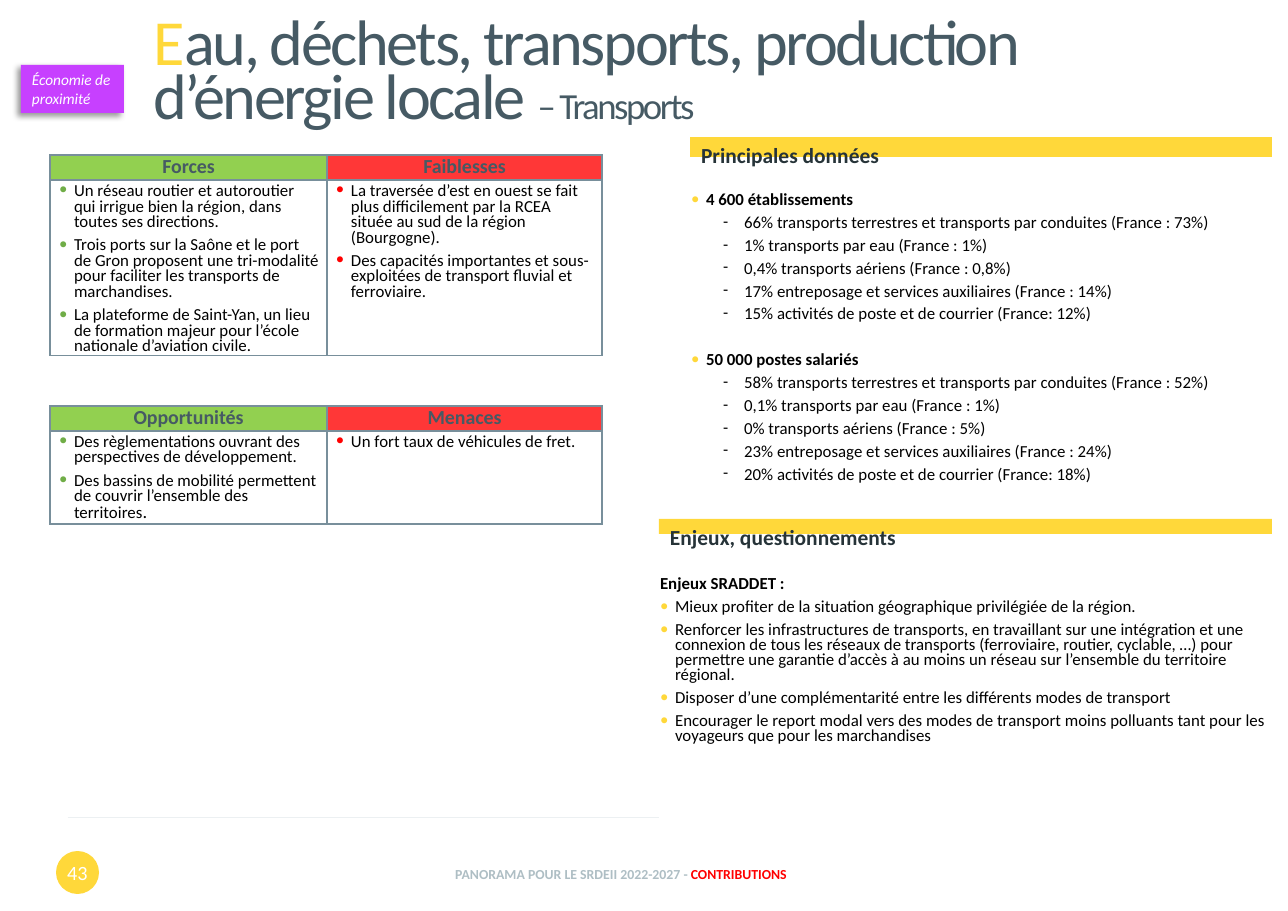
"""Build the transport slide: two strength and risk tables, key figures and regional issues."""
from lxml import etree
from pptx import Presentation
from pptx.dml.color import RGBColor
from pptx.enum.shapes import MSO_CONNECTOR, MSO_SHAPE
from pptx.enum.text import MSO_ANCHOR, MSO_AUTO_SIZE, PP_ALIGN
from pptx.oxml import parse_xml
from pptx.oxml.ns import nsdecls, qn
from pptx.util import Pt

PX = 8298
TOP, MIDDLE, BOTTOM = MSO_ANCHOR.TOP, MSO_ANCHOR.MIDDLE, MSO_ANCHOR.BOTTOM
LEFT, CENTER = PP_ALIGN.LEFT, PP_ALIGN.CENTER
JUSTIFY = PP_ALIGN.JUSTIFY
RECTANGLE, OVAL = MSO_SHAPE.RECTANGLE, MSO_SHAPE.OVAL
YELLOW = RGBColor(0xFF, 0xD8, 0x3A)
PURPLE = RGBColor(0xC7, 0x40, 0xFF)
SLATE = RGBColor(0x46, 0x5A, 0x64)
INK = RGBColor(0x26, 0x33, 0x38)
BLACK = RGBColor(0, 0, 0)
WHITE = RGBColor(0xFF, 0xFF, 0xFF)
RED = RGBColor(0xFF, 0, 0)
HEADER_RED = RGBColor(0xFF, 0x37, 0x37)
HEADER_GREEN = RGBColor(0x92, 0xD0, 0x50)
BULLET_GREEN = RGBColor(0x70, 0xAD, 0x47)
BORDER = RGBColor(0x78, 0x8F, 0x9B)
RULE = RGBColor(0xEC, 0xF0, 0xF2)
FOOTER = RGBColor(0xAE, 0xBE, 0xC4)


def add_run(paragraph, text, size, color, bold=False):
    """Append one formatted run and return it."""
    run = paragraph.add_run()
    run.text = text
    run.font.name = "Calibri"
    run.font.size = Pt(size)
    run.font.bold = bold
    run.font.color.rgb = color
    return run


def add_item(frame, text, bullet, bullet_color, bold=False, gap=2):
    """Append one list item; a dash makes it second level, no bullet a heading."""
    first = not frame.paragraphs[0].runs
    paragraph = frame.paragraphs[0] if first else frame.add_paragraph()
    paragraph.alignment = LEFT
    paragraph.line_spacing = 0.75
    paragraph.space_before = Pt(0 if first else gap)
    paragraph.space_after = Pt(3)
    paragraph.level = 1 if bullet == "-" else 0
    margin, indent = {"-": (54, -21), "•": (16, -15), "": (1, 0)}[bullet]
    properties = paragraph._p.get_or_add_pPr()
    properties.set("marL", str(margin * PX))
    properties.set("indent", str(indent * PX))
    if bullet:
        color = etree.SubElement(properties, qn("a:buClr"))
        etree.SubElement(color, qn("a:srgbClr")).set("val", str(bullet_color))
        etree.SubElement(properties, qn("a:buFont")).set("typeface", "Calibri")
        etree.SubElement(properties, qn("a:buChar")).set("char", bullet)
    else:
        etree.SubElement(properties, qn("a:buNone"))
    add_run(paragraph, text, 11, BLACK, bold)
    return paragraph


presentation = Presentation()
presentation.slide_width = 1288 * PX
presentation.slide_height = 911 * PX
slide = presentation.slides.add_slide(presentation.slide_layouts[3])
title, figures, issues = slide.placeholders

for placeholder, (left, top, width, height), anchor, side in (
    (title, (142, 13, 1095, 123), BOTTOM, 11),
    (figures, (690, 188, 582, 295), TOP, 0),
    (issues, (659, 572, 614, 250), TOP, 0),
):
    placeholder.left, placeholder.top = left * PX, top * PX
    placeholder.width, placeholder.height = width * PX, height * PX
    frame = placeholder.text_frame
    frame.word_wrap = True
    frame.auto_size = MSO_AUTO_SIZE.NONE
    frame.vertical_anchor = anchor
    frame.margin_left = frame.margin_right = side * PX

heading = title.text_frame.paragraphs[0]
heading.alignment = LEFT
heading.line_spacing = 0.7
for text, size, color in (
    ("E", 42, YELLOW),
    ("au, déchets, transports, production d’énergie locale ", 42, SLATE),
    ("– Transports", 24, SLATE),
):
    run = add_run(heading, text, size, color)
    run._r.get_or_add_rPr().set("spc", "-160")

for gap, label, details in (
    (0, "4 600 établissements", (
        "66% transports terrestres et transports par conduites (France : 73%)",
        "1% transports par eau (France : 1%)",
        "0,4% transports aériens (France : 0,8%)",
        "17% entreposage et services auxiliaires (France : 14%)",
        "15% activités de poste et de courrier (France: 12%)",
    )),
    (17, "50 000 postes salariés", (
        "58% transports terrestres et transports par conduites (France : 52%)",
        "0,1% transports par eau (France : 1%)",
        "0% transports aériens (France : 5%)",
        "23% entreposage et services auxiliaires (France : 24%)",
        "20% activités de poste et de courrier (France: 18%)",
    )),
):
    add_item(figures.text_frame, label, "•", YELLOW, True, gap)
    for detail in details:
        add_item(figures.text_frame, detail, "-", BLACK)

add_item(issues.text_frame, "Enjeux SRADDET :", "", None, True)
for issue in (
    "Mieux profiter de la situation géographique privilégiée de la région.",
    "Renforcer les infrastructures de transports, en travaillant sur une intégration et une "
    "connexion de tous les réseaux de transports (ferroviaire, routier, cyclable, …) pour "
    "permettre une garantie d’accès à au moins un réseau sur l’ensemble du territoire régional.",
    "Disposer d’une complémentarité entre les différents modes de transport",
    "Encourager le report modal vers des modes de transport moins polluants tant pour les "
    "voyageurs que pour les marchandises",
):
    add_item(issues.text_frame, issue, "•", YELLOW)

for kind, box, fill, text, size, color, bold, alignment, anchor, side in (
    (RECTANGLE, (690, 137, 582, 20), YELLOW, "Principales données", 14, INK, True, JUSTIFY, TOP, 11),
    (RECTANGLE, (659, 519, 613, 15), YELLOW, "Enjeux, questionnements", 14, INK, True, JUSTIFY, TOP, 11),
    (RECTANGLE, (21, 65, 103, 48), PURPLE, "Économie de proximité", 10, WHITE, False, LEFT, TOP, 11),
    (OVAL, (56, 851, 43, 43), YELLOW, "43", 13.2, WHITE, False, CENTER, MIDDLE, 0),
):
    shape = slide.shapes.add_shape(kind, *(length * PX for length in box))
    shape.fill.solid()
    shape.fill.fore_color.rgb = fill
    shape.line.fill.background()
    shape.shadow.inherit = False
    frame = shape.text_frame
    frame.word_wrap = True
    frame.vertical_anchor = anchor
    frame.margin_left = frame.margin_right = side * PX
    paragraph = frame.paragraphs[0]
    paragraph.alignment = alignment
    run = add_run(paragraph, text, size, color, bold)
    if fill == PURPLE:
        run.font.italic = True
        shape._element.spPr.find(qn("a:effectLst")).append(parse_xml(
            f'<a:outerShdw {nsdecls("a")} blurRad="50800" dist="38100" dir="8100000">'
            '<a:srgbClr val="000000"><a:alpha val="40000"/></a:srgbClr></a:outerShdw>'))

rule = slide.shapes.add_connector(MSO_CONNECTOR.STRAIGHT, 68 * PX, 817 * PX, 659 * PX, 817 * PX)
rule.line.color.rgb = RULE
rule.line.width = Pt(0.5)
etree.SubElement(rule._element.spPr, qn("a:effectLst"))

footer = slide.shapes.add_textbox(123 * PX, 850 * PX, 996 * PX, 48 * PX).text_frame
footer.word_wrap = True
footer.vertical_anchor = MIDDLE
footer.paragraphs[0].alignment = CENTER
add_run(footer.paragraphs[0], "PANORAMA POUR LE SRDEII 2022-2027 - ", 9, FOOTER, True)
add_run(footer.paragraphs[0], "CONTRIBUTIONS", 9, RED, True)

for top, body_height, columns in (
    (155, 175, (
        ("Forces", (
            "Un réseau routier et autoroutier qui irrigue bien la région, dans toutes ses directions.",
            "Trois ports sur la Saône et le port de Gron proposent une tri-modalité pour faciliter "
            "les transports de marchandises.",
            "La plateforme de Saint-Yan, un lieu de formation majeur pour l’école nationale "
            "d’aviation civile.")),
        ("Faiblesses", (
            "La traversée d’est en ouest se fait plus difficilement par la RCEA située au sud de "
            "la région (Bourgogne).",
            "Des capacités importantes et sous-exploitées de transport fluvial et ferroviaire.")))),
    (406, 92, (
        ("Opportunités", (
            "Des règlementations ouvrant des perspectives de développement.",
            "Des bassins de mobilité permettent de couvrir l’ensemble des territoires")),
        ("Menaces", ("Un fort taux de véhicules de fret.",)))),
):
    table = slide.shapes.add_table(2, 2, 50 * PX, top * PX, 552 * PX, (25 + body_height) * PX).table
    table.first_row = table.horz_banding = False
    table.rows[0].height, table.rows[1].height = 25 * PX, body_height * PX
    table.columns[0].width, table.columns[1].width = 277 * PX, 275 * PX
    for cell in table.iter_cells():
        for side in ("lnL", "lnR", "lnT", "lnB"):
            cell._tc.get_or_add_tcPr().append(parse_xml(
                f'<a:{side} {nsdecls("a")} w="12700"><a:solidFill>'
                f'<a:srgbClr val="{BORDER}"/></a:solidFill></a:{side}>'))
        cell.fill.solid()
        cell.fill.fore_color.rgb = WHITE
        cell.margin_left = cell.margin_right = 8 * PX
        cell.margin_top = cell.margin_bottom = 4 * PX
    for index, (label, items) in enumerate(columns):
        header, body = table.cell(0, index), table.cell(1, index)
        header.fill.fore_color.rgb = (HEADER_GREEN, HEADER_RED)[index]
        header.margin_top = header.margin_bottom = 0
        header.text_frame.paragraphs[0].alignment = CENTER
        add_run(header.text_frame.paragraphs[0], label, 13, SLATE, True)
        for item in items:
            paragraph = add_item(body.text_frame, item, "•", (BULLET_GREEN, RED)[index])
        if label == "Opportunités":
            add_run(paragraph, ".", 12, BLACK)

presentation.save("out.pptx")
